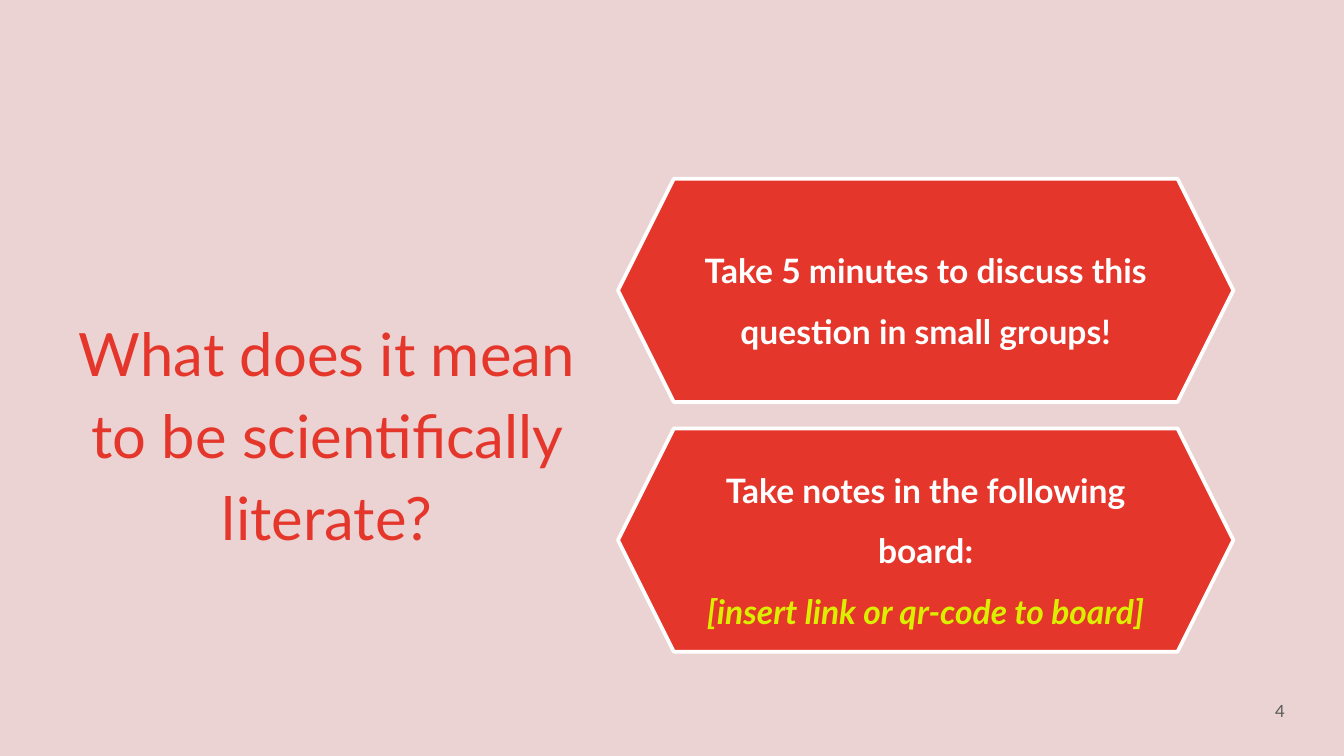
from dataclasses import dataclass

from pptx import Presentation
from pptx.dml.color import RGBColor
from pptx.enum import shapes, text
from pptx.util import Cm, Pt


@dataclass(frozen=True)
class Theme:
    font: str = "Lato"
    background: str = "EBD3D3"
    accent: str = "E5362B"
    light: str = "FFFFFF"
    highlight: str = "DAF000"
    muted: str = "595959"
    question_size: int = 32
    task_size: int = 18
    number_size: int = 9
    outline: int = 2


@dataclass(frozen=True)
class Area:
    """A rectangle in centimetres."""
    left: float
    top: float
    width: float
    height: float

    def lengths(self) -> tuple:
        return Cm(self.left), Cm(self.top), Cm(self.width), Cm(self.height)


@dataclass(frozen=True)
class Task:
    instruction: str
    placeholder: str = ""


THEME = Theme()
QUESTION = Area(0.86, 5.08, 10.64, 6.07)
NUMBER = Area(23.01, 12.9, 1.52, 1.09)
FIRST_TASK = Area(11.68, 3.38, 11.63, 4.22)
TASK_GAP = 0.5
TASKS = (
    Task("Take 5 minutes to discuss this question in small groups!"),
    Task("Take notes in the following board:", "[insert link or qr-code to board]"),
)


def add_span(para, words: str, *, size: int, color: str, bold=None, italic=None) -> None:
    span = para.add_run()
    span.text = words
    font = span.font
    font.name, font.size = THEME.font, Pt(size)
    font.bold, font.italic = bold, italic
    font.color.rgb = RGBColor.from_string(color)


def prepare_paragraph(box, *, align, spacing=None, after=None, inset=0.25):
    """Set up the text frame of a box and return its first paragraph."""
    frame = box.text_frame
    frame.word_wrap = True
    frame.vertical_anchor = text.MSO_ANCHOR.MIDDLE
    frame.margin_left = frame.margin_right = Cm(0.25)
    frame.margin_top = frame.margin_bottom = Cm(inset)
    para = frame.paragraphs[0]
    para.alignment = align
    para.line_spacing = spacing
    para.space_after = after
    return para


def add_label(page, area: Area, words: str, *, size: int, color: str, **layout) -> None:
    box = page.shapes.add_textbox(*area.lengths())
    add_span(prepare_paragraph(box, **layout), words, size=size, color=color)


def add_task(page, area: Area, task: Task) -> None:
    box = page.shapes.add_shape(shapes.MSO_SHAPE.HEXAGON, *area.lengths())
    box.adjustments[0] = 0.25
    box.shadow.inherit = False
    box.fill.solid()
    box.fill.fore_color.rgb = RGBColor.from_string(THEME.accent)
    box.line.color.rgb = RGBColor.from_string(THEME.light)
    box.line.width = Pt(THEME.outline)
    para = prepare_paragraph(box, align=text.PP_ALIGN.CENTER, spacing=1.5, inset=0.13)
    add_span(para, task.instruction, size=THEME.task_size, color=THEME.light, bold=True)
    if task.placeholder:
        para.add_line_break()
        add_span(para, task.placeholder, size=THEME.task_size,
                 color=THEME.highlight, bold=True, italic=True)


def main() -> None:
    deck = Presentation()
    deck.slide_width, deck.slide_height = Cm(25.4), Cm(14.29)
    page = deck.slides.add_slide(deck.slide_layouts[6])
    page.background.fill.solid()
    page.background.fill.fore_color.rgb = RGBColor.from_string(THEME.background)

    add_label(page, QUESTION, "What does it mean to be scientifically literate?",
              size=THEME.question_size, color=THEME.accent,
              align=text.PP_ALIGN.CENTER, spacing=1.15, after=Pt(16))
    add_label(page, NUMBER, "4", size=THEME.number_size, color=THEME.muted,
              align=text.PP_ALIGN.RIGHT)
    for index, task in enumerate(TASKS):
        top = FIRST_TASK.top + index * (FIRST_TASK.height + TASK_GAP)
        add_task(page, Area(FIRST_TASK.left, top, FIRST_TASK.width, FIRST_TASK.height), task)

    deck.save("out.pptx")


if __name__ == "__main__":
    main()
